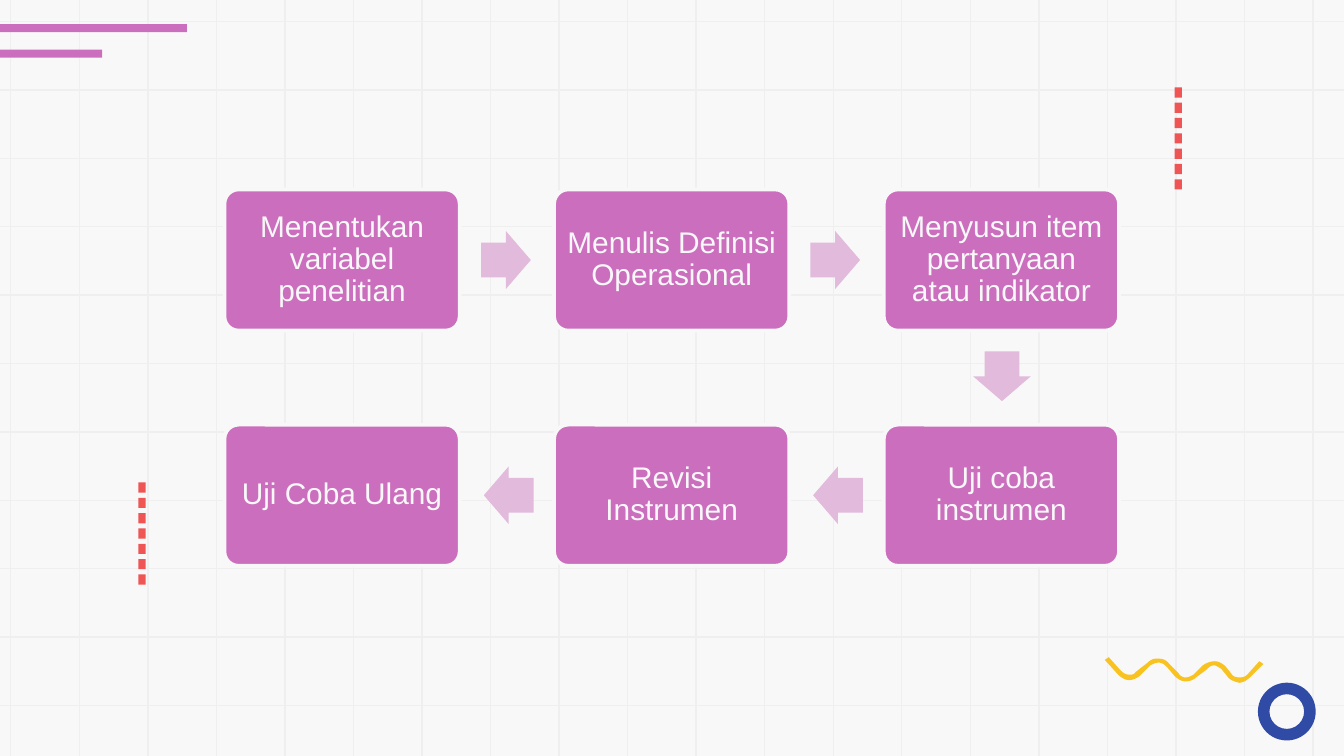
from lxml import etree
from pptx import Presentation
from pptx.dml.color import RGBColor
from pptx.enum.shapes import MSO_CONNECTOR, MSO_SHAPE
from pptx.enum.text import MSO_ANCHOR, PP_ALIGN
from pptx.oxml.ns import qn
from pptx.util import Inches, Pt

STRAIGHT = MSO_CONNECTOR.STRAIGHT
RECTANGLE = MSO_SHAPE.RECTANGLE
ROUNDED = MSO_SHAPE.ROUNDED_RECTANGLE
ARROW = MSO_SHAPE.RIGHT_ARROW
DONUT = MSO_SHAPE.DONUT
MIDDLE = MSO_ANCHOR.MIDDLE
CENTER = PP_ALIGN.CENTER

COLUMNS, ROWS = 100, 56.25
PAPER, GRID = "F8F8F8", "EFEFEF"
ORCHID, PALE_ORCHID = "CB6EBE", "E2BADB"
RED, BLUE, YELLOW = "F05555", "304BA6", "F8C220"

STEPS = [
    ("Menentukan variabel penelitian", 0, 0),
    ("Menulis Definisi Operasional", 1, 0),
    ("Menyusun item pertanyaan atau indikator", 2, 0),
    ("Uji coba instrumen", 2, 1),
    ("Revisi Instrumen", 1, 1),
    ("Uji Coba Ulang", 0, 1),
]
ARROWS = [
    (35.8, 17.2, 0),
    (60.3, 17.2, 0),
    (72.7, 25.85, 90),
    (60.5, 34.7, 180),
    (36, 34.7, 180),
]
WAVE = [
    (82.5, 48.9), (82.2, 49.1), (83.2, 50.2),
    (83.4, 50.4, 83.7, 50.6, 84, 50.6), (84.3, 50.6, 84.5, 50.5, 84.8, 50.3),
    (85.6, 49.5), (85.8, 49.4, 86, 49.3, 86.2, 49.3),
    (86.4, 49.3, 86.6, 49.4, 86.8, 49.6), (87.4, 50.3),
    (87.6, 50.5, 87.9, 50.7, 88.2, 50.7), (88.5, 50.7, 88.8, 50.6, 89, 50.4),
    (89.8, 49.8), (90, 49.6, 90.1, 49.5, 90.4, 49.5),
    (90.6, 49.6, 90.8, 49.7, 90.9, 49.8), (91.3, 50.3),
    (91.5, 50.6, 91.8, 50.7, 92.2, 50.8), (92.5, 50.8, 92.8, 50.6, 93, 50.4),
    (94, 49.4), (93.7, 49.2), (92.8, 50.2),
    (92.6, 50.4, 92.4, 50.4, 92.2, 50.4), (91.9, 50.4, 91.7, 50.3, 91.6, 50.1),
    (91.2, 49.6), (91, 49.4, 90.7, 49.2, 90.4, 49.2),
    (90.1, 49.2, 89.8, 49.3, 89.5, 49.5), (88.8, 50.2),
    (88.6, 50.3, 88.5, 50.4, 88.2, 50.4), (88, 50.4, 87.8, 50.3, 87.7, 50.1),
    (87, 49.4), (86.8, 49.1, 86.5, 49, 86.1, 49),
    (85.8, 49, 85.6, 49.1, 85.4, 49.3), (84.5, 50),
    (84.4, 50.2, 84.2, 50.2, 84, 50.2), (83.8, 50.2, 83.6, 50.1, 83.4, 49.9),
]


def color(value):
    return RGBColor.from_string(value)


def trace(segments, steps=6):
    points = [segments[0]]
    for segment in segments[1:]:
        if len(segment) == 2:
            points.append(segment)
            continue
        ax, ay = points[-1]
        bx, by, cx, cy, dx, dy = segment
        for step in range(1, steps + 1):
            t = step / steps
            u = 1 - t
            weights = u**3, 3 * u * u * t, 3 * u * t * t, t**3
            points.append(tuple(
                sum(weight * value for weight, value in zip(weights, values))
                for values in ((ax, bx, cx, dx), (ay, by, cy, dy))
            ))
    return points


class SlideBuilder:
    font, size = "Arial", Pt(16)

    def __init__(self, deck):
        self.page = deck.slides.add_slide(deck.slide_layouts[6])
        self.shapes = self.page.shapes
        self.column = deck.slide_width / COLUMNS
        self.row = deck.slide_height / ROWS

    def spot(self, column, row):
        return round(column * self.column), round(row * self.row)

    def background(self, fill):
        self.page.background.fill.solid()
        self.page.background.fill.fore_color.rgb = color(fill)

    def line(self, start, end):
        line = self.shapes.add_connector(STRAIGHT, *self.spot(*start), *self.spot(*end))
        line.line.color.rgb = color(GRID)
        line.line.width = Pt(0.75)
        etree.SubElement(line._element.spPr, qn("a:effectLst"))

    def paint(self, shape, fill):
        shape.shadow.inherit = False
        shape.fill.solid()
        shape.fill.fore_color.rgb = color(fill)
        shape.line.fill.background()

    def shape(self, kind, column, row, width, height, fill, adjustments=()):
        shape = self.shapes.add_shape(kind, *self.spot(column, row), *self.spot(width, height))
        self.paint(shape, fill)
        for index, value in enumerate(adjustments):
            shape.adjustments[index] = value
        return shape

    def outline(self, points, fill):
        first, *rest = [self.spot(*point) for point in points]
        builder = self.shapes.build_freeform(*first)
        builder.add_line_segments(rest, close=True)
        self.paint(builder.convert_to_shape(), fill)

    def dashes(self, column, row):
        for index in range(7):
            self.shape(RECTANGLE, column, row + index * 1.14, 0.54, 0.76, RED)

    def step(self, text, column, row):
        box = self.shape(ROUNDED, 16.7 + column * 24.53, 14.1 + row * 17.5,
                         17.5, 10.5, ORCHID, [0.1])
        box.line.color.rgb = color(PAPER)
        box.line.width = Pt(2)
        frame = box.text_frame
        frame.word_wrap = True
        frame.vertical_anchor = MIDDLE
        inset = Inches(0.06)
        frame.margin_left = frame.margin_right = inset
        frame.margin_top = frame.margin_bottom = inset
        para = frame.paragraphs[0]
        para.text = text
        para.alignment = CENTER
        para.line_spacing = 0.9
        para.font.name = self.font
        para.font.size = self.size
        para.font.color.rgb = color(PAPER)

    def arrow(self, column, row, rotation):
        arrow = self.shape(ARROW, column, row, 3.7, 4.3, PALE_ORCHID, [0.6, 0.5])
        arrow.rotation = rotation


def main():
    deck = Presentation()
    deck.slide_width = Inches(10)
    deck.slide_height = deck.slide_width * 9 // 16
    slide = SlideBuilder(deck)
    slide.background(PAPER)
    for index in range(11):
        row = 1.6 + index * 5.09
        slide.line((COLUMNS, row), (0, row))
    for index in range(20):
        column = 0.8 + index * 5.1
        slide.line((column, 0), (column, ROWS))
    slide.shape(RECTANGLE, 0, 1.8, 13.9, 0.6, ORCHID)
    slide.shape(RECTANGLE, 0, 3.7, 7.6, 0.6, ORCHID)
    slide.shape(DONUT, 93.6, 50.8, 4.3, 4.3, BLUE, [0.2])
    slide.outline(trace(WAVE), YELLOW)
    slide.dashes(10.3, 35.9)
    slide.dashes(87.4, 6.5)
    for step in STEPS:
        slide.step(*step)
    for arrow in ARROWS:
        slide.arrow(*arrow)
    deck.save("out.pptx")


if __name__ == "__main__":
    main()
